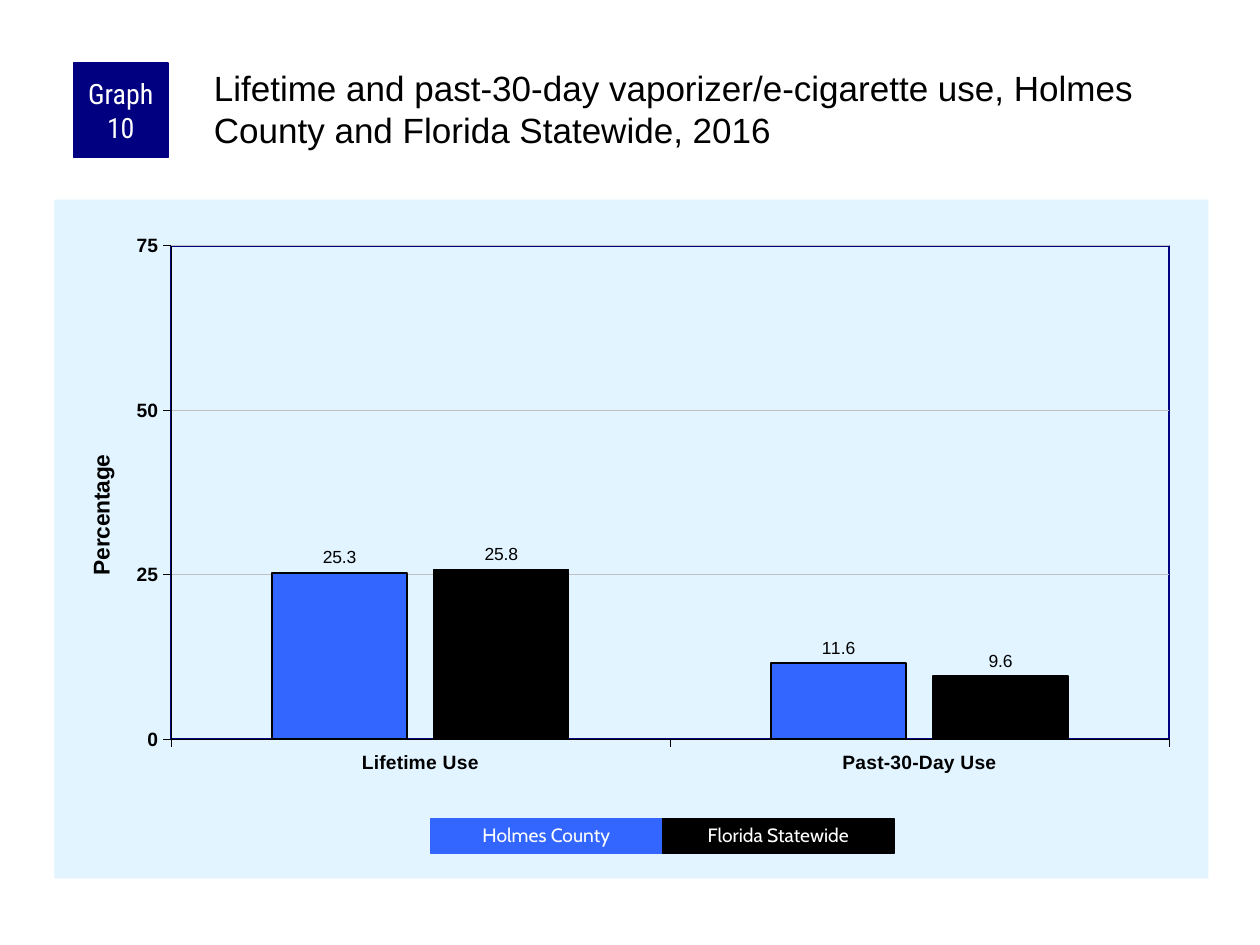
from lxml import etree
from pptx import Presentation
from pptx.chart.data import CategoryChartData
from pptx.dml.color import RGBColor
from pptx.enum.chart import XL_CHART_TYPE, XL_LABEL_POSITION, XL_TICK_MARK
from pptx.enum.shapes import MSO_SHAPE
from pptx.enum.text import MSO_ANCHOR, PP_ALIGN
from pptx.oxml import parse_xml
from pptx.oxml.ns import nsdecls, qn
from pptx.util import Pt

COLUMNS = XL_CHART_TYPE.COLUMN_CLUSTERED
OUTSIDE_END = XL_LABEL_POSITION.OUTSIDE_END
TICK_OUT, TICK_NONE = XL_TICK_MARK.OUTSIDE, XL_TICK_MARK.NONE
RECTANGLE = MSO_SHAPE.RECTANGLE
TOP, MIDDLE = MSO_ANCHOR.TOP, MSO_ANCHOR.MIDDLE
LEFT, CENTER = PP_ALIGN.LEFT, PP_ALIGN.CENTER

NAVY, BLUE, BLACK, WHITE = "000080", "3366FF", "000000", "FFFFFF"
PALE_BLUE, GREY = "E1F4FF", "C0C0C0"


def color(hex_string):
    return RGBColor.from_string(hex_string)


def set_layout(parent, index, **values):
    """Give a chart part a manual layout, as fractions of the chart."""
    for old in parent.findall(qn("c:layout")):
        parent.remove(old)
    layout = etree.Element(qn("c:layout"))
    manual = etree.SubElement(layout, qn("c:manualLayout"))
    for tag, value in values.items():
        etree.SubElement(manual, qn("c:" + tag), val=str(value))
    parent.insert(index, layout)


prs = Presentation()
prs.slide_width, prs.slide_height = Pt(720), Pt(540)
slide = prs.slides.add_slide(prs.slide_layouts[5])

# Title
title = slide.shapes.title
title.left, title.top, title.width, title.height = Pt(120), Pt(36), Pt(570), Pt(60)
heading = title.text_frame
heading.text = ("Lifetime and past-30-day vaporizer/e-cigarette use, "
                "Holmes County and Florida Statewide, 2016")
heading.word_wrap = True
heading.vertical_anchor = TOP
heading.margin_left = heading.margin_top = Pt(2.2)
heading.margin_right = heading.margin_bottom = 0
line = heading.paragraphs[0]
line.alignment = LEFT
line.font.name, line.font.size = "Arial", Pt(20)
line.font.color.rgb = color(BLACK)

# Column chart
chart_data = CategoryChartData(number_format="0.0")
chart_data.categories = ["Lifetime Use", "Past-30-Day Use"]
chart_data.add_series("Holmes County", [25.3, 11.6])
chart_data.add_series("Florida Statewide", [25.8, 9.6])
chart = slide.shapes.add_chart(COLUMNS, Pt(31), Pt(114), Pt(659.5), Pt(388),
                               chart_data).chart
chart.has_legend = chart.has_title = False
chart.font.name, chart.font.size = "Arial", Pt(11.5)
chart.font.color.rgb = color(BLACK)

columns = chart.plots[0]
columns.gap_width, columns.overlap = 150, -20
columns.vary_by_categories = False
for series, fill, border in zip(columns.series, (BLUE, BLACK), (1, 0.75)):
    series.format.fill.solid()
    series.format.fill.fore_color.rgb = color(fill)
    series.format.line.color.rgb = color(BLACK)
    series.format.line.width = Pt(border)
    labels = series.data_labels
    labels.show_value = True
    labels.position = OUTSIDE_END
    labels.number_format, labels.number_format_is_linked = "0.0", False
    labels.font.name, labels.font.size = "Arial", Pt(10)
    labels.font.color.rgb = color(BLACK)

# Axes
percent_axis = chart.value_axis
for axis in (chart.category_axis, percent_axis):
    axis.major_tick_mark, axis.minor_tick_mark = TICK_OUT, TICK_NONE
    axis.format.line.color.rgb = color(BLACK)
    axis.format.line.width = Pt(0.25)
    font = axis.tick_labels.font
    font.name, font.size, font.bold = "Arial", Pt(11), True
    font.color.rgb = color(BLACK)
percent_axis.minimum_scale, percent_axis.maximum_scale = 0, 75
percent_axis.major_unit = 25
percent_axis.tick_labels.number_format = "0"
percent_axis.tick_labels.number_format_is_linked = False
gridline = percent_axis.major_gridlines.format.line
gridline.color.rgb, gridline.width = color(GREY), Pt(0.25)
axis_title = percent_axis.axis_title
axis_title.text_frame.text = "Percentage"
font = axis_title.text_frame.paragraphs[0].font
font.name, font.size, font.bold = "Arial", Pt(13), True
font.color.rgb = color(BLACK)

# Plot position, plot border and chart background
plot_area = columns._element.getparent()
set_layout(plot_area, 0, layoutTarget="inner", xMode="edge", yMode="edge",
           x=0.101, y=0.068, w=0.865, h=0.727)
set_layout(axis_title._element, 1, xMode="edge", yMode="edge", x=0.025, y=0.37)
for old in plot_area.findall(qn("c:spPr")):
    plot_area.remove(old)
plot_area.append(parse_xml(
    f'<c:spPr {nsdecls("c", "a")}><a:noFill/><a:ln w="12700"><a:solidFill>'
    f'<a:srgbClr val="{NAVY}"/></a:solidFill></a:ln></c:spPr>'))
chart._chartSpace.find(qn("c:chart")).addnext(parse_xml(
    f'<c:spPr {nsdecls("c", "a")}><a:solidFill><a:srgbClr val="{PALE_BLUE}"/>'
    '</a:solidFill><a:ln><a:noFill/></a:ln></c:spPr>'))

# Graph number and the two legend keys
KEY_LEFT, KEY_WIDTH = 246, 132.5
boxes = [
    ("Graph 10", 42, 36, 54, 54, NAVY, "Roboto Condensed", 16, 3.6, 1),
    ("Holmes County", KEY_LEFT, 468, KEY_WIDTH, 19.5, BLUE, "Cabin", 11, 7.2, 0.9),
    ("Florida Statewide", KEY_LEFT + KEY_WIDTH, 468, KEY_WIDTH, 19.5, BLACK,
     "Cabin", 11, 7.2, 0.9),
]
for text, left, top, width, height, fill, typeface, size, margin, spacing in boxes:
    box = slide.shapes.add_shape(RECTANGLE, Pt(left), Pt(top), Pt(width), Pt(height))
    box.shadow.inherit = False
    box.fill.solid()
    box.fill.fore_color.rgb = color(fill)
    box.line.color.rgb = color(fill)
    box.line.width = Pt(0.75)
    frame = box.text_frame
    frame.text = text
    frame.word_wrap = True
    frame.vertical_anchor = MIDDLE
    frame.margin_left = frame.margin_right = Pt(margin)
    frame.margin_top = frame.margin_bottom = 0
    line = frame.paragraphs[0]
    line.alignment, line.line_spacing = CENTER, spacing
    line.font.name, line.font.size = typeface, Pt(size)
    line.font.color.rgb = color(WHITE)

prs.save("out.pptx")
